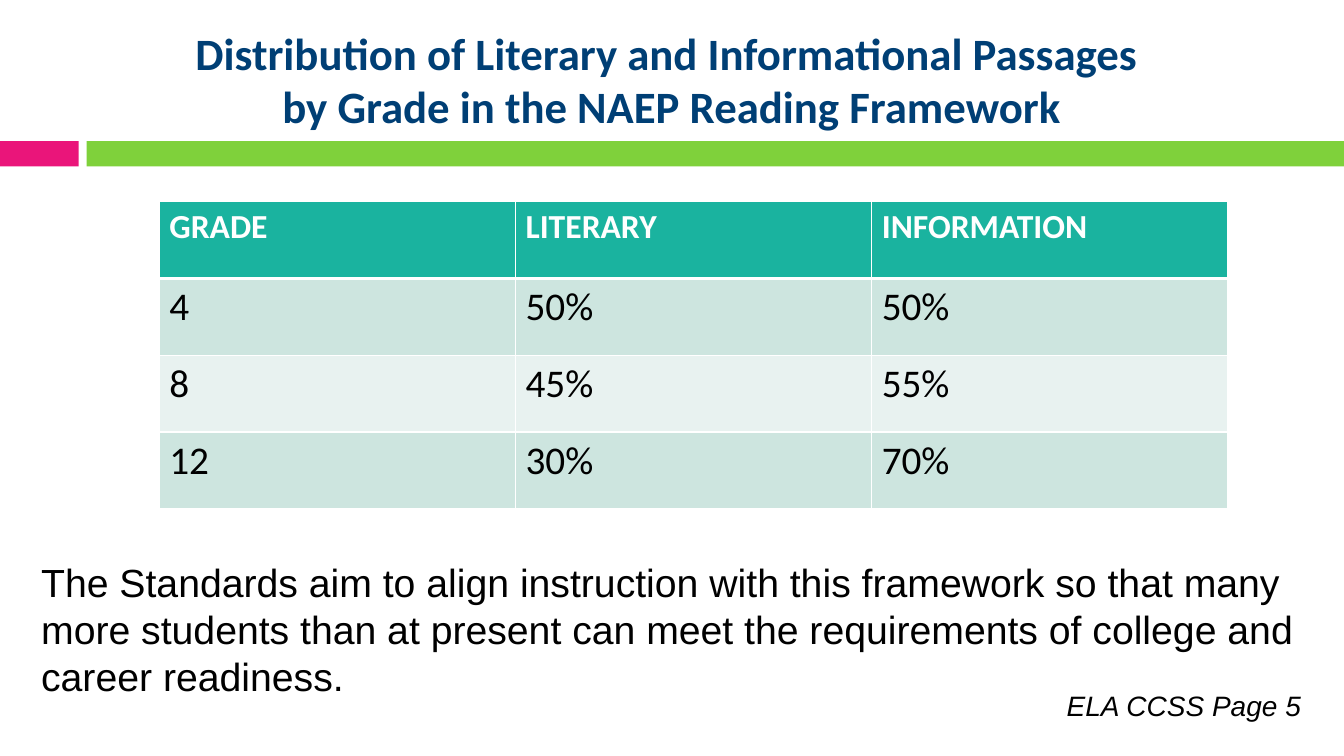
"""Build the slide on NAEP literary and informational passages by grade."""
from lxml.etree import SubElement
from pptx import Presentation
from pptx.dml.color import RGBColor
from pptx.enum.shapes import MSO_SHAPE
from pptx.enum.text import MSO_ANCHOR, MSO_AUTO_SIZE, PP_ALIGN
from pptx.oxml.ns import qn
from pptx.util import Inches, Pt

NAVY = RGBColor(0x00, 0x3F, 0x75)
PINK = RGBColor(0xEA, 0x15, 0x7A)
GREEN = RGBColor(0x7F, 0xD1, 0x3B)
TEAL = RGBColor(0x1A, 0xB3, 0x9F)
BAND_DARK = RGBColor(0xCD, 0xE5, 0xDF)
BAND_LIGHT = RGBColor(0xE8, 0xF2, 0xF0)
WHITE = RGBColor(0xFF, 0xFF, 0xFF)
BLACK = RGBColor(0x00, 0x00, 0x00)


def set_text(tf, text, size, font="Calibri", color=BLACK, bold=False, italic=False, align=PP_ALIGN.LEFT):
    p = tf.paragraphs[0]
    p.text = text
    p.alignment = align
    for r in p.runs:
        r.font.name = font
        r.font.size = Pt(size)
        r.font.bold = bold
        r.font.italic = italic
        r.font.color.rgb = color


def set_border(cell, side, width):
    ln = SubElement(cell._tc.get_or_add_tcPr(), qn(f"a:ln{side}"), w=str(Pt(width)))
    fill = SubElement(ln, qn("a:solidFill"))
    SubElement(fill, qn("a:srgbClr"), val=str(WHITE))


prs = Presentation()
prs.slide_width, prs.slide_height = Inches(13.33), Inches(7.5)
s = prs.slides.add_slide(prs.slide_layouts[5])

for left, width, color in [(0, 0.78, PINK), (0.86, 12.47, GREEN)]:
    bar = s.shapes.add_shape(MSO_SHAPE.RECTANGLE, Inches(left), Inches(1.4), Inches(width), Inches(0.25))
    bar.shadow.inherit = False
    bar.fill.solid()
    bar.fill.fore_color.rgb = color
    bar.line.fill.background()

title = s.shapes.title
title.left, title.top, title.width, title.height = Inches(0), Inches(0.25), Inches(13.33), Inches(1.58)
tf = title.text_frame
tf.word_wrap = True
tf.auto_size = MSO_AUTO_SIZE.NONE
tf.vertical_anchor = MSO_ANCHOR.TOP
tf.margin_top = 0
set_text(tf, "Distribution of Literary and Informational Passages \nby Grade in the NAEP Reading Framework",
         32, color=NAVY, bold=True, align=PP_ALIGN.CENTER)

rows = [
    ("GRADE", "LITERARY", "INFORMATION"),
    ("4", "50%", "50%"),
    ("8", "45%", "55%"),
    ("12", "30%", "70%"),
]
table = s.shapes.add_table(4, 3, Inches(1.58), Inches(2), Inches(10.6), Inches(3.05)).table
for i, row in enumerate(rows):
    header = i == 0
    for j, text in enumerate(row):
        cell = table.cell(i, j)
        set_text(cell.text_frame, text, 24 if header else 28, color=WHITE if header else BLACK, bold=header)
        for side in "LRTB":
            thick = (i, side) in [(0, "B"), (1, "T")]
            set_border(cell, side, 3 if thick else 1)
        cell.fill.solid()
        cell.fill.fore_color.rgb = TEAL if header else BAND_DARK if i % 2 else BAND_LIGHT

notes = [
    ("The Standards aim to align instruction with this framework so that many more students than at present "
     "can meet the requirements of college and career readiness.", 0.31, 5.49, 13.02, 1.51, 28, True),
    ("ELA CCSS Page 5", 10.48, 6.78, 2.55, 0.44, 20, False),
]
for text, left, top, width, height, size, wrap in notes:
    tf = s.shapes.add_textbox(Inches(left), Inches(top), Inches(width), Inches(height)).text_frame
    tf.word_wrap = wrap
    tf.auto_size = MSO_AUTO_SIZE.SHAPE_TO_FIT_TEXT
    set_text(tf, text, size, font="Arial", italic=not wrap)

prs.save("out.pptx")
